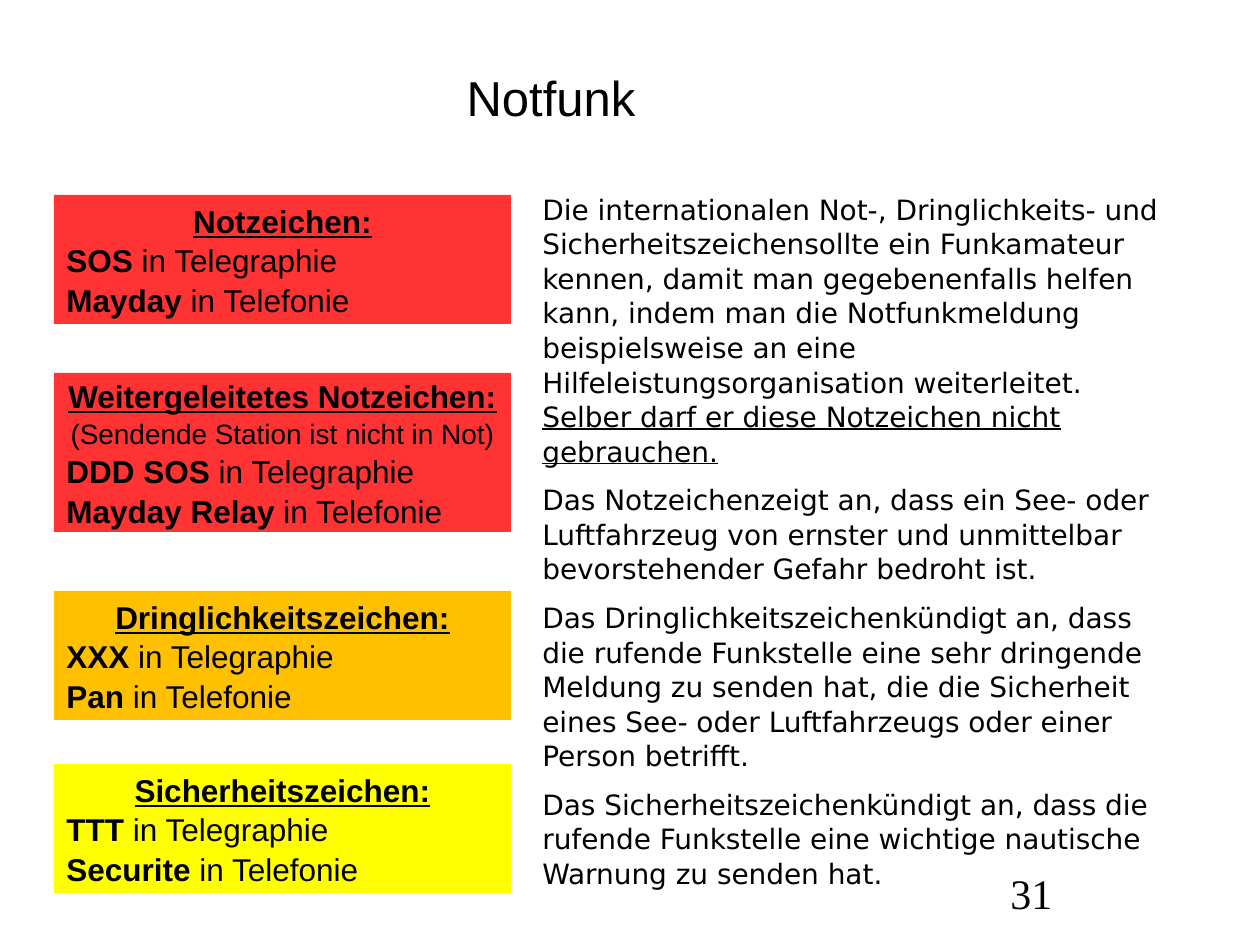
from pptx import Presentation
from pptx.dml.color import RGBColor
from pptx.enum.shapes import MSO_SHAPE
from pptx.enum.text import MSO_ANCHOR, PP_ALIGN
from pptx.util import Emu, Pt

PX = 914400 // 126
COLORS = {"text": "000000", "red": "FF3333", "orange": "FFC000", "yellow": "FFFF00"}

# Signal boxes: top, height, fill, heading, note, Morse sign, voice sign
SIGNS = [
    (195, 129, "red", "Notzeichen:", None, "SOS", "Mayday"),
    (373, 159, "red", "Weitergeleitetes Notzeichen:",
     "(Sendende Station ist nicht in Not)", "DDD SOS", "Mayday Relay"),
    (591, 129, "orange", "Dringlichkeitszeichen:", None, "XXX", "Pan"),
    (764, 129, "yellow", "Sicherheitszeichen:", None, "TTT", "Securite"),
]

# Each paragraph is a list of (text, underlined)
BODY = [
    [("Die internationalen Not-, Dringlichkeits- und Sicherheitszeichensollte "
      "ein Funkamateur kennen, damit man gegebenenfalls helfen kann, indem man "
      "die Notfunkmeldung beispielsweise an eine Hilfeleistungsorganisation "
      "weiterleitet. ", False),
     ("Selber darf er diese Notzeichen nicht gebrauchen.", True)],
    [("Das Notzeichenzeigt an, dass ein See- oder Luftfahrzeug von ernster und "
      "unmittelbar bevorstehender Gefahr bedroht ist.", False)],
    [("Das Dringlichkeitszeichenkündigt an, dass die rufende Funkstelle eine "
      "sehr dringende Meldung zu senden hat, die die Sicherheit eines See- oder "
      "Luftfahrzeugs oder einer Person betrifft.", False)],
    [("Das Sicherheitszeichenkündigt an, dass die rufende Funkstelle eine "
      "wichtige nautische Warnung zu senden hat.", False)],
]


def px(*sizes):
    return [Emu(size * PX) for size in sizes]


def color(name):
    return RGBColor.from_string(COLORS[name])


def style(para, size, face="Arial", align=PP_ALIGN.LEFT):
    para.alignment = align
    para.font.size = Pt(size)
    para.font.name = face
    para.font.color.rgb = color("text")


def add_para(frame, first):
    return frame.paragraphs[0] if first else frame.add_paragraph()


def add_run(para, text, bold=None, under=None):
    run = para.add_run()
    run.text = text
    run.font.bold = bold
    run.font.underline = under


def add_box(slide, box):
    frame = slide.shapes.add_textbox(*px(*box)).text_frame
    frame.word_wrap = True
    return frame


def add_label(slide, box, text, size, face, align, anchor):
    frame = add_box(slide, box)
    frame.vertical_anchor = anchor
    para = frame.paragraphs[0]
    add_run(para, text)
    style(para, size, face, align)


def add_sign(slide, top, height, fill, head, note, morse, voice):
    shape = slide.shapes.add_shape(MSO_SHAPE.RECTANGLE, *px(54, top, 457, height))
    shape.shadow.inherit = False
    shape.fill.solid()
    shape.fill.fore_color.rgb = color(fill)
    shape.line.fill.background()
    frame = shape.text_frame
    frame.word_wrap = True
    frame.vertical_anchor = MSO_ANCHOR.MIDDLE

    # Heading and optional note
    para = add_para(frame, True)
    add_run(para, head, True, True)
    style(para, 18, align=PP_ALIGN.CENTER)
    if note:
        para = add_para(frame, False)
        add_run(para, note)
        style(para, 16, align=PP_ALIGN.CENTER)

    # Sign for each mode
    for sign, mode in ((morse, "Telegraphie"), (voice, "Telefonie")):
        para = add_para(frame, False)
        add_run(para, sign, True)
        add_run(para, f" in {mode}")
        style(para, 18)
    for para in frame.paragraphs:
        para.line_spacing = 1.05


def add_body(slide):
    frame = add_box(slide, (530, 185, 647, 699))
    for i, runs in enumerate(BODY):
        para = add_para(frame, i == 0)
        for text, under in runs:
            add_run(para, text, under=under)
        style(para, 16, "DejaVu Sans")
        para.line_spacing = 1.03
        para.space_before = Pt(8 if i else 0)


def main():
    deck = Presentation()
    deck.slide_width, deck.slide_height = px(1260, 945)
    slide = deck.slides.add_slide(deck.slide_layouts[6])

    # Title and page number
    add_label(slide, (95, 55, 912, 84), "Notfunk", 28, "Arial",
              PP_ALIGN.CENTER, MSO_ANCHOR.MIDDLE)
    add_label(slide, (998, 861, 262, 63), "31", 24, "Times New Roman",
              PP_ALIGN.LEFT, MSO_ANCHOR.TOP)

    # Explanations on the right, signals on the left
    add_body(slide)
    for sign in SIGNS:
        add_sign(slide, *sign)
    deck.save("out.pptx")


if __name__ == "__main__":
    main()
